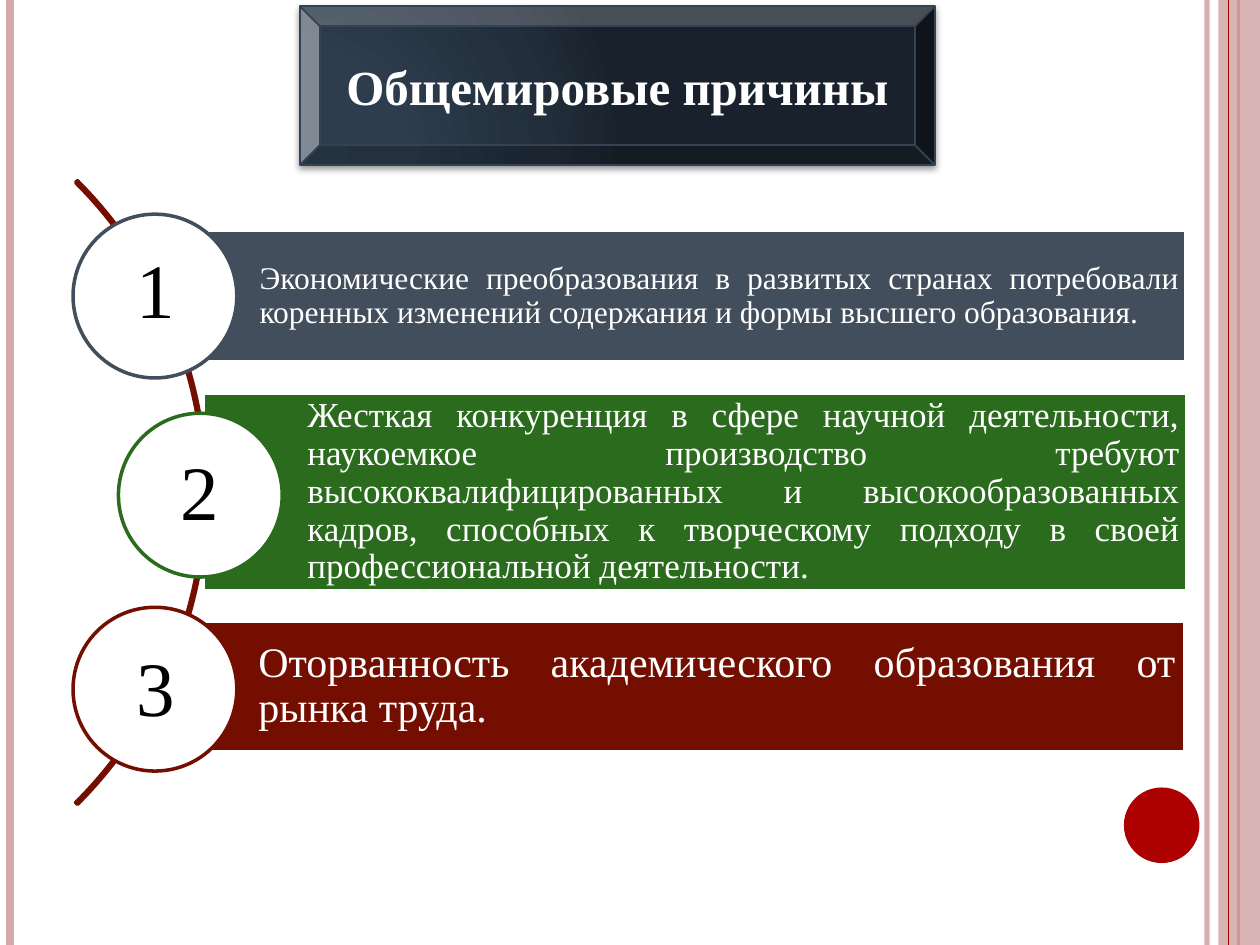
from dataclasses import dataclass
from typing import NamedTuple

from lxml.etree import SubElement
from pptx import Presentation
from pptx.dml.color import RGBColor
from pptx.enum.shapes import MSO_CONNECTOR, MSO_SHAPE
from pptx.enum.text import MSO_ANCHOR, MSO_AUTO_SIZE, PP_ALIGN
from pptx.oxml import parse_xml
from pptx.oxml.ns import nsdecls, qn
from pptx.util import Inches, Pt


@dataclass(frozen=True)
class Theme:
    font: str = "Times New Roman"
    white: str = "FFFFFF"
    black: str = "000000"
    pink: str = "D3ABAB"
    red: str = "AD0101"
    slate: str = "424E5B"
    green: str = "2B6B1D"
    maroon: str = "730E00"
    title_line: str = "334353"
    title_stops: tuple = ((0, "2F4051"), (30, "2E3D4E"), (75, "222E3B"), (100, "19222C"))
    title_size: int = 28
    number_size: int = 44


class Box(NamedTuple):
    col: float
    row: float
    cols: float
    rows: float


class Rule(NamedTuple):
    col: float
    color: str
    width: float
    opacity: int = 100


class Reason(NamedTuple):
    number: str
    text: str
    size: int
    color: str
    bar: Box
    circle: tuple
    label: Box
    inset: float


THEME = Theme()
COLUMNS, ROWS = 100, 75
CELL = Inches(0.1)
CIRCLE = 13

BACK_RULES = (
    Rule(95.8, THEME.pink, 3, 93),
    Rule(0.8, THEME.pink, 4.5),
    Rule(98.3, THEME.red, 1.5),
)
FRONT_RULE = Rule(97.5, THEME.red, 0.75)
TITLE_BOX = Box(23.8, 0.5, 50.4, 12.6)

REASONS = (
    Reason("1", "Экономические преобразования в развитых странах потребовали коренных "
           "изменений содержания и формы высшего образования.",
           18, THEME.slate, Box(12.3, 18.3, 81.8, 10.4), (5.8, 17),
           Box(8.8, 18.7, 7.1, 8.4), 0.5),
    Reason("2", "Жесткая конкуренция в сфере научной деятельности, наукоемкое производство "
           "требуют высококвалифицированных и высокообразованных кадров, способных "
           "к творческому подходу в своей профессиональной деятельности.",
           20, THEME.green, Box(16.1, 31.2, 78.1, 15.7), (9.4, 32.8),
           Box(12.3, 34.7, 7.1, 8.4), 0.6),
    Reason("3", "Оторванность академического образования от рынка труда.",
           24, THEME.maroon, Box(12.2, 49.3, 81.8, 10.4), (5.8, 48.2),
           Box(9.7, 50.3, 5.3, 8.4), 0.7),
)


def grid(*cells: float) -> list:
    return [round(c * CELL) for c in cells]


def set_opacity(element, percent: int) -> None:
    for color in element.iter(qn("a:srgbClr")):
        SubElement(color, qn("a:alpha")).set("val", str(percent * 1000))


def add_shape(s, kind, box: Box, fill: str = "", line: str = "", width: float = 2):
    sp = s.shapes.add_shape(kind, *grid(*box))
    sp.shadow.inherit = False
    if fill:
        sp.fill.solid()
        sp.fill.fore_color.rgb = RGBColor.from_string(fill)
    else:
        sp.fill.background()
    if line:
        sp.line.color.rgb = RGBColor.from_string(line)
        sp.line.width = Pt(width)
    else:
        sp.line.fill.background()
    return sp


def write(sp, text: str, *, size: int, color: str, align=PP_ALIGN.CENTER, bold=False,
          anchor=MSO_ANCHOR.MIDDLE, spacing=None, insets=None, auto_size=None) -> None:
    tf = sp.text_frame
    tf.word_wrap = True
    tf.vertical_anchor = anchor
    if auto_size is not None:
        tf.auto_size = auto_size
    if insets:
        tf.margin_left, tf.margin_top, tf.margin_right, tf.margin_bottom = grid(*insets)
    p = tf.paragraphs[0]
    p.alignment = align
    if spacing:
        p.line_spacing = spacing
    r = p.add_run()
    r.text = text
    r.font.name = THEME.font
    r.font.size = Pt(size)
    r.font.bold = bold
    r.font.color.rgb = RGBColor.from_string(color)


def add_rule(s, rule: Rule) -> None:
    ln = s.shapes.add_connector(MSO_CONNECTOR.STRAIGHT,
                                *grid(rule.col, 0, rule.col, ROWS))
    ln.line.color.rgb = RGBColor.from_string(rule.color)
    ln.line.width = Pt(rule.width)
    sppr = ln.element.spPr
    if rule.opacity < 100:
        set_opacity(sppr, rule.opacity)
    SubElement(sppr, qn("a:effectLst"))


def add_frame(s) -> None:
    for rule in BACK_RULES:
        add_rule(s, rule)
    band = add_shape(s, MSO_SHAPE.RECTANGLE, Box(96.7, 0, 3.3, ROWS), THEME.pink)
    set_opacity(band.element.spPr, 87)
    add_rule(s, FRONT_RULE)
    add_shape(s, MSO_SHAPE.OVAL, Box(89.2, 62.5, 6, 6), THEME.red)


def add_title(s, text: str) -> None:
    plate = add_shape(s, MSO_SHAPE.BEVEL, TITLE_BOX, line=THEME.title_line, width=1)
    sppr = plate.element.spPr
    stops = "".join(f'<a:gs pos="{pos * 1000}"><a:srgbClr val="{color}"/></a:gs>'
                    for pos, color in THEME.title_stops)
    sppr.replace(sppr.find(qn("a:noFill")), parse_xml(
        f'<a:gradFill {nsdecls("a")} rotWithShape="1"><a:gsLst>{stops}</a:gsLst>'
        '<a:path path="circle"><a:fillToRect l="5000" t="100000" r="120000" b="10000"/>'
        '</a:path></a:gradFill>'))
    sppr.find(qn("a:effectLst")).append(parse_xml(
        f'<a:outerShdw {nsdecls("a")} blurRad="{Pt(4)}" dist="{Pt(1.6)}" dir="5400000" '
        f'rotWithShape="0"><a:srgbClr val="{THEME.black}"><a:alpha val="42000"/>'
        '</a:srgbClr></a:outerShdw>'))
    title = s.shapes.title
    title.left, title.top, title.width, title.height = grid(*TITLE_BOX)
    write(title, text, size=THEME.title_size, color=THEME.white, bold=True,
          auto_size=MSO_AUTO_SIZE.NONE)
    title.element.getparent().append(title.element)


def add_reason(s, reason: Reason) -> None:
    bar = add_shape(s, MSO_SHAPE.RECTANGLE, reason.bar, reason.color, THEME.white)
    write(bar, reason.text, size=reason.size, color=THEME.white, align=PP_ALIGN.JUSTIFY,
          spacing=0.9, insets=(8.3, reason.inset, reason.inset, reason.inset))
    add_shape(s, MSO_SHAPE.OVAL, Box(*reason.circle, CIRCLE, CIRCLE),
              THEME.white, reason.color)


def add_number(s, reason: Reason) -> None:
    label = s.shapes.add_textbox(*grid(*reason.label))
    write(label, reason.number, size=THEME.number_size, color=THEME.black,
          anchor=MSO_ANCHOR.TOP, auto_size=MSO_AUTO_SIZE.SHAPE_TO_FIT_TEXT)


def main() -> None:
    prs = Presentation()
    prs.slide_width, prs.slide_height = grid(COLUMNS, ROWS)
    s = prs.slides.add_slide(prs.slide_layouts[5])
    add_frame(s)
    add_title(s, "Общемировые причины")
    arc = add_shape(s, MSO_SHAPE.BLOCK_ARC, Box(-53.6, 4.1, 70, 70), line=THEME.maroon)
    for i, value in enumerate((189, 27, 0.003)):
        arc.adjustments[i] = value
    for reason in REASONS:
        add_reason(s, reason)
    for reason in REASONS:
        add_number(s, reason)
    prs.save("out.pptx")


if __name__ == "__main__":
    main()
